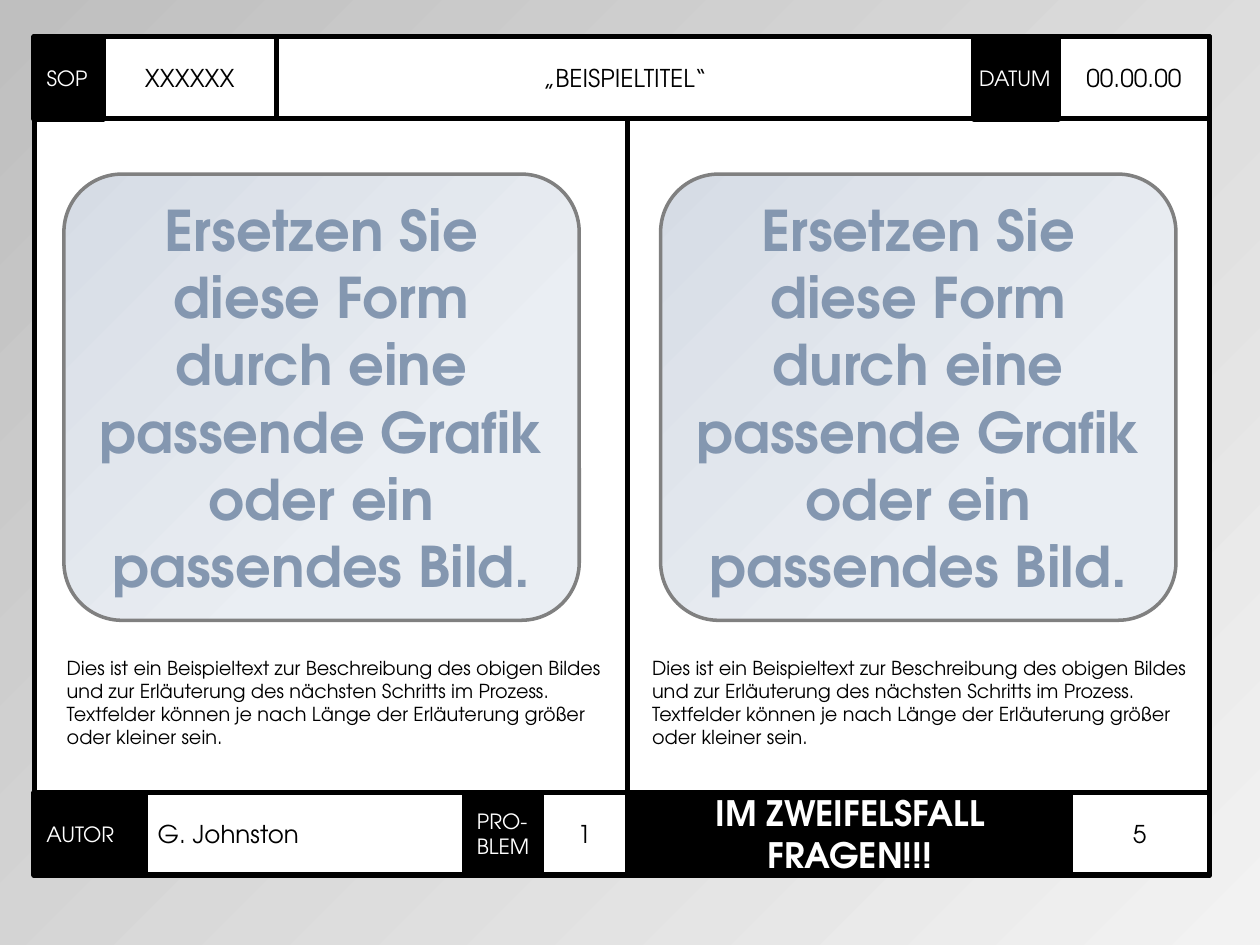
from dataclasses import dataclass
from lxml.etree import SubElement
from pptx import Presentation
from pptx.dml.color import RGBColor as RGB
from pptx.enum.shapes import MSO_CONNECTOR as LINK, MSO_SHAPE as SHAPE
from pptx.enum.text import MSO_ANCHOR as ANCHOR, PP_ALIGN as ALIGN
from pptx.oxml.ns import qn
from pptx.util import Pt


@dataclass(frozen=True)
class Theme:
    font: str = "TeX Gyre Adventor"
    black: str = "000000"
    white: str = "FFFFFF"
    grey: str = "808080"
    blue: str = "8497B0"
    page: tuple = ((0, "F2F2F2"), (1, "BFBFBF"))
    panel: tuple = ((0.32, "EAEEF3"), (1, "D6DCE5"))
    body: int = 11
    label: int = 12
    value: int = 14
    alert: int = 20
    hero: int = 32
    thin: float = 2.75
    thick: float = 3
    edge: float = 2


class Sheet:
    def __init__(self, theme, slide):
        self.theme = theme
        self.slide = slide
        self.blend(slide.background.fill, theme.page)

    def blend(self, fill, stops):
        fill.gradient()
        fill.gradient_angle = 135
        for stop, (place, tone) in zip(fill.gradient_stops, stops):
            stop.position = place
            stop.color.rgb = RGB.from_string(tone)

    def words(self, frame, lines, size, tone, align=ALIGN.LEFT, bold=False):
        frame.word_wrap = True
        frame.text = "\n".join(lines)
        for para in frame.paragraphs:
            para.alignment = align
            font = para.font
            font.name, font.size, font.bold = self.theme.font, Pt(size), bold
            font.color.rgb = RGB.from_string(tone)

    def form(self, kind, box, fill, tone, width):
        shape = self.slide.shapes.add_shape(kind, *map(Pt, box))
        shape.shadow.inherit = False
        if fill is None:
            shape.fill.background()
        elif isinstance(fill, tuple):
            self.blend(shape.fill, fill)
        else:
            shape.fill.solid()
            shape.fill.fore_color.rgb = RGB.from_string(fill)
        shape.line.color.rgb = RGB.from_string(tone)
        shape.line.width = Pt(width)
        shape.text_frame.vertical_anchor = ANCHOR.MIDDLE
        return shape

    def frame(self, box, fill=None):
        self.form(SHAPE.RECTANGLE, box, fill, self.theme.black, self.theme.thin)

    def label(self, box, text, size=None, align=ALIGN.LEFT, bold=False, inset=7.2):
        t = self.theme
        shape = self.form(SHAPE.RECTANGLE, box, t.black, t.black, t.thick)
        frame = shape.text_frame
        frame.margin_left = frame.margin_right = Pt(inset)
        self.words(frame, [text], size or t.label, t.white, align, bold)

    def value(self, box, text, align=ALIGN.CENTER):
        t = self.theme
        shape = self.form(SHAPE.RECTANGLE, box, t.white, t.black, t.thin)
        self.words(shape.text_frame, [text], t.value, t.black, align)

    def panel(self, box, text):
        t = self.theme
        shape = self.form(SHAPE.ROUNDED_RECTANGLE, box, t.panel, t.grey, t.edge)
        shape.adjustments[0] = 0.13
        self.words(shape.text_frame, [text], t.hero, t.blue, ALIGN.CENTER, True)

    def note(self, box, lines):
        area = self.slide.shapes.add_textbox(*map(Pt, box))
        self.words(area.text_frame, lines, self.theme.body, self.theme.black)

    def rule(self, x, top, end):
        line = self.slide.shapes.add_connector(
            LINK.STRAIGHT, Pt(x), Pt(top), Pt(x), Pt(end))
        line.line.color.rgb = RGB.from_string(self.theme.black)
        line.line.width = Pt(self.theme.thick)
        SubElement(line._element.spPr, qn("a:effectLst"))


LEFT, TOP, WIDE, ROW, FOOT = 19.5, 21, 671.5, 47, 453
HINT = ("Ersetzen Sie diese Form durch eine passende Grafik "
        "oder ein passendes Bild.")
STORY = [
    "Dies ist ein Beispieltext zur Beschreibung des obigen Bildes "
    "und zur Erläuterung des nächsten Schritts im Prozess.",
    "Textfelder können je nach Länge der Erläuterung größer oder kleiner sein.",
]


def main():
    deck = Presentation()
    deck.slide_width, deck.slide_height = Pt(720), Pt(540)
    theme = Theme()
    sheet = Sheet(theme, deck.slides.add_slide(deck.slide_layouts[6]))

    # Outer frame
    sheet.frame((LEFT, TOP, WIDE, 479.5), theme.white)

    # Header row
    def head(x, end):
        return x, TOP, end - x, ROW

    sheet.label(head(LEFT, 59), "SOP")
    sheet.frame(head(LEFT, LEFT + WIDE))
    sheet.value(head(59, 158), "XXXXXX")
    sheet.label(head(556.5, 605), "DATUM", inset=3)
    sheet.value(head(605, 691), "00.00.00")
    sheet.value(head(158, 556.5), "„BEISPIELTITEL“")

    # Two steps: panel and description
    for x, start, width in ((36.5, 31, 327.5), (377.5, 365.5, 325.5)):
        sheet.panel((x, 99.5, 294.5, 255), HINT)
        sheet.note((start, 371.5, width, 60.5), STORY)
    sheet.rule(358.5, TOP + ROW, FOOT)

    # Footer row
    def foot(x, end):
        return x, FOOT, end - x, ROW

    sheet.label(foot(LEFT, 83), "AUTOR")
    sheet.value(foot(83, 267), "G. Johnston", ALIGN.LEFT)
    sheet.label(foot(360, 611.5), "IM ZWEIFELSFALL FRAGEN!!!",
                theme.alert, ALIGN.CENTER, True)
    sheet.value(foot(611.5, 691), "5")
    sheet.label(foot(265.5, 312.5), "PRO-BLEM")
    sheet.value(foot(309.5, 358.5), "1")

    deck.save("out.pptx")


if __name__ == "__main__":
    main()
